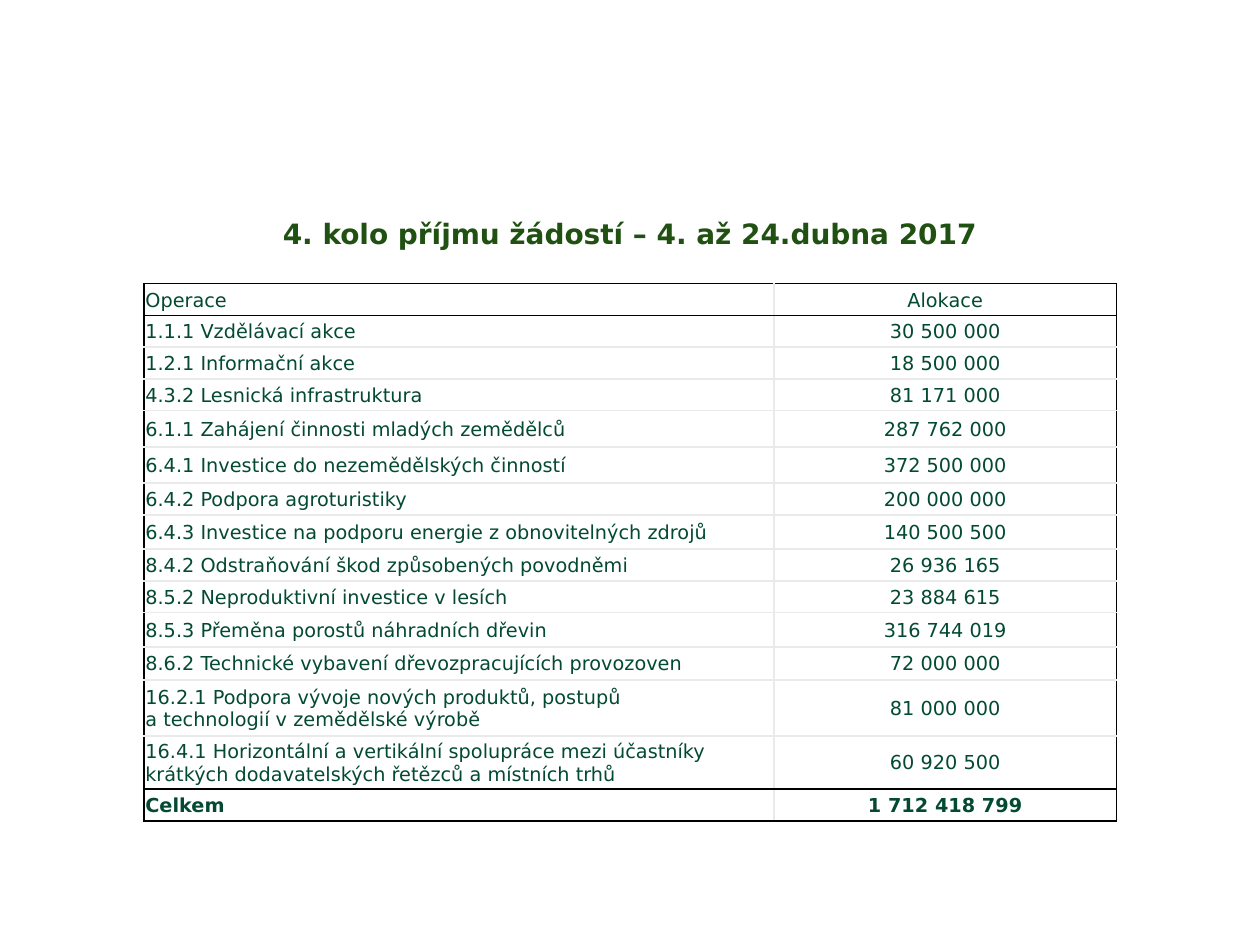
from lxml import etree
from pptx import Presentation, util as u
from pptx.dml.color import RGBColor
from pptx.enum import text
from pptx.oxml import ns

FONT = "DejaVu Sans"
HUES = {"title": "215112", "text": "034A31", "edge": "000000",
        "grid": "EAEAEA", "fill": "FFFFFF"}
# operation, allocation, row height in cm
ROWS = [
    ("Operace", "Alokace", 0.64),
    ("1.1.1 Vzdělávací akce", "30 500 000", 0.64),
    ("1.2.1 Informační akce", "18 500 000", 0.64),
    ("4.3.2 Lesnická infrastruktura", "81 171 000", 0.64),
    ("6.1.1 Zahájení činnosti mladých zemědělců", "287 762 000", 0.73),
    ("6.4.1 Investice do nezemědělských činností", "372 500 000", 0.73),
    ("6.4.2 Podpora agroturistiky", "200 000 000", 0.64),
    ("6.4.3 Investice na podporu energie z obnovitelných zdrojů",
     "140 500 500", 0.69),
    ("8.4.2 Odstraňování škod způsobených povodněmi", "26 936 165", 0.64),
    ("8.5.2 Neproduktivní investice v lesích", "23 884 615", 0.64),
    ("8.5.3 Přeměna porostů náhradních dřevin", "316 744 019", 0.69),
    ("8.6.2 Technické vybavení dřevozpracujících provozoven",
     "72 000 000", 0.67),
    ("16.2.1 Podpora vývoje nových produktů, postupů\n"
     "a technologií v zemědělské výrobě", "81 000 000", 1.13),
    ("16.4.1 Horizontální a vertikální spolupráce mezi účastníky "
     "krátkých dodavatelských řetězců a místních trhů", "60 920 500", 1.07),
    ("Celkem", "1 712 418 799", 0.64),
]
COLS = [12.7, 6.91]


def add_run(para, words, size, hue, bold):
    run = para.add_run()
    run.text = words
    run.font.name = FONT
    run.font.size = u.Pt(size)
    run.font.bold = bold
    run.font.color.rgb = RGBColor.from_string(HUES[hue])


def set_edges(cell, hues):
    """Draw the left, right, top and bottom borders, in that order."""
    props = cell._tc.get_or_add_tcPr()
    for i, (side, hue) in enumerate(zip("LRTB", hues)):
        line = etree.Element(ns.qn("a:ln" + side), w=str(u.Pt(1)))
        fill = etree.SubElement(line, ns.qn("a:solidFill"))
        etree.SubElement(fill, ns.qn("a:srgbClr"), val=HUES[hue])
        props.insert(i, line)


deck = Presentation()
deck.slide_width, deck.slide_height = u.Cm(25.4), u.Cm(19.05)
slide = deck.slides.add_slide(deck.slide_layouts[6])

title = slide.shapes.add_textbox(u.Cm(5.18), u.Cm(4.14), u.Cm(15.04), u.Cm(1.14))
frame = title.text_frame
frame.word_wrap = False
frame.vertical_anchor = text.MSO_ANCHOR.BOTTOM
frame.margin_left = frame.margin_right = u.Cm(0.36)
frame.margin_top = frame.margin_bottom = u.Cm(0.23)
para = frame.paragraphs[0]
para.alignment = text.PP_ALIGN.CENTER
add_run(para, "4. kolo příjmu žádostí – 4. až 24.dubna 2017", 16, "title", True)

high = sum(row[2] for row in ROWS)
table = slide.shapes.add_table(len(ROWS), len(COLS), u.Cm(2.9), u.Cm(5.72),
                               u.Cm(sum(COLS)), u.Cm(high)).table
table.first_row = table.horz_banding = False
for c, wide in enumerate(COLS):
    table.columns[c].width = u.Cm(wide)

last = len(ROWS) - 1
for r, (*words, tall) in enumerate(ROWS):
    table.rows[r].height = u.Cm(tall)
    top = "edge" if r in (0, 1, last) else "grid"
    low = "edge" if r in (0, last - 1, last) else "grid"
    for c, value in enumerate(words):
        cell = table.cell(r, c)
        cell.fill.solid()
        cell.fill.fore_color.rgb = RGBColor.from_string(HUES["fill"])
        cell.vertical_anchor = text.MSO_ANCHOR.MIDDLE
        cell.margin_left = cell.margin_right = cell.margin_top = u.Cm(0.03)
        cell.margin_bottom = 0
        sides = ("edge", "grid") if c == 0 else ("grid", "edge")
        set_edges(cell, (*sides, top, low))
        for i, part in enumerate(value.split("\n")):
            body = cell.text_frame
            para = body.add_paragraph() if i else body.paragraphs[0]
            para.alignment = text.PP_ALIGN.CENTER if c else text.PP_ALIGN.LEFT
            add_run(para, part, 11, "text", r == last)

deck.save("out.pptx")
